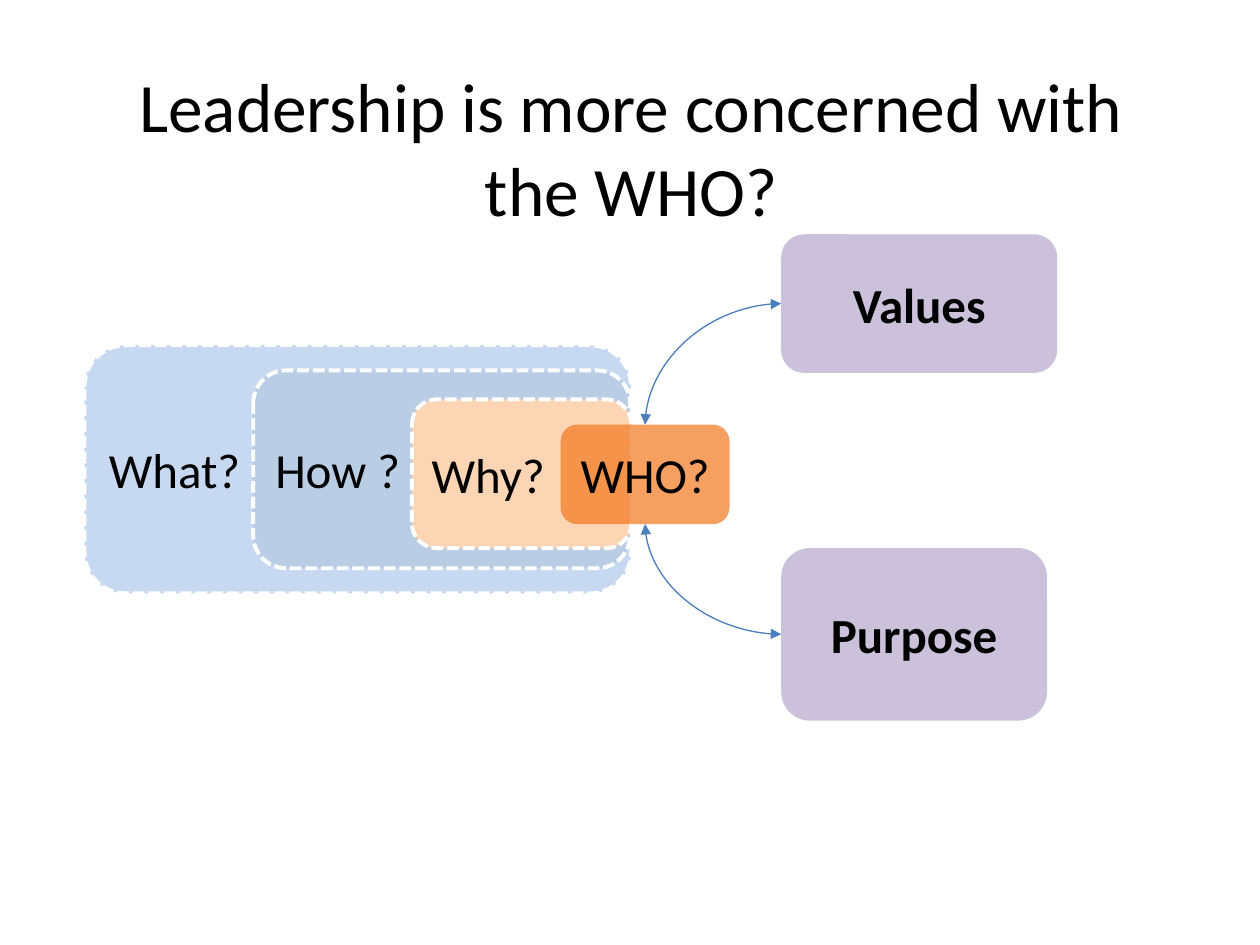
from lxml.etree import SubElement
from pptx import Presentation
from pptx.dml.color import RGBColor
from pptx.enum.dml import MSO_LINE
from pptx.enum.shapes import MSO_CONNECTOR, MSO_SHAPE
from pptx.enum.text import MSO_ANCHOR, MSO_AUTO_SIZE, PP_ALIGN
from pptx.oxml.ns import qn
from pptx.util import Inches, Pt

FONT = {"name": "Calibri", "size": Pt(28), "bold": False}
FRAME = {"word_wrap": True, "auto_size": MSO_AUTO_SIZE.NONE,
         "vertical_anchor": MSO_ANCHOR.MIDDLE}
NESTED = [
    ("What?", (0.67, 2.74, 4.34, 1.97), "C6D9F1"),
    ("How ?", (2.01, 2.94, 2.99, 1.57), "B9CDE5"),
    ("Why?", (3.27, 3.17, 1.74, 1.18), "FCD5B5"),
]
TOP, LEFT, BOTTOM = 0, 1, 2


def color(value):
    """Turn a hex string into a colour."""
    return RGBColor.from_string(value)


def assign(obj, values):
    """Set attributes from a dict."""
    for name, value in values.items():
        setattr(obj, name, value)


def write(sp, text, align, **font):
    """Put one formatted line of text in a shape."""
    tf = sp.text_frame
    assign(tf, FRAME)
    p = tf.paragraphs[0]
    p.alignment = align
    r = p.add_run()
    r.text = text
    assign(r.font, {**FONT, **font})
    r.font.color.rgb = color("000000")


def add_title(s, text, box):
    """Place and fill the title placeholder."""
    sp = s.shapes.title
    assign(sp, dict(zip(("left", "top", "width", "height"), map(Inches, box))))
    write(sp, text, PP_ALIGN.CENTER, size=Pt(39.6))


def add_box(s, text, box, fill, align=PP_ALIGN.CENTER, dashed=False, alpha=None, **font):
    """Add a rounded box with a label."""
    sp = s.shapes.add_shape(MSO_SHAPE.ROUNDED_RECTANGLE, *map(Inches, box))
    sp.shadow.inherit = False
    sp.fill.solid()
    sp.fill.fore_color.rgb = color(fill)
    if alpha:
        clr = sp.fill._xPr.find(f".//{qn('a:srgbClr')}")
        SubElement(clr, qn("a:alpha"), val=str(alpha * 1000))
    if dashed:
        sp.line.color.rgb = color("FFFFFF")
        assign(sp.line, {"width": Pt(2.25), "dash_style": MSO_LINE.SQUARE_DOT})
        sp.line._ln.find(qn("a:prstDash")).set("val", "sysDash")
    else:
        sp.line.fill.background()
    write(sp, text, align, **font)
    return sp


def add_curve(s, source, target, site):
    """Join a box's left side to the top or bottom of another box."""
    end_y = target.top if site == TOP else target.top + target.height
    c = s.shapes.add_connector(
        MSO_CONNECTOR.CURVE, source.left, source.top + source.height // 2,
        target.left + target.width // 2, end_y)
    c.begin_connect(source, LEFT)
    c.end_connect(target, site)
    c.line.color.rgb = color("4B7EBC")
    c.line.width = Pt(0.75)
    for tag in ("a:headEnd", "a:tailEnd"):
        SubElement(c.line._ln, qn(tag), type="triangle")
    sp_pr = c._element.spPr
    sp_pr.find(qn("a:prstGeom")).set("prst", "curvedConnector2")
    SubElement(sp_pr, qn("a:effectLst"))


def main():
    """Build the slide."""
    prs = Presentation()
    assign(prs, {"slide_width": Inches(10), "slide_height": Inches(7.5)})
    s = prs.slides.add_slide(prs.slide_layouts[5])
    purpose = add_box(s, "Purpose", (6.2, 4.35, 2.11, 1.37), "CCC1DA", bold=True)
    values = add_box(s, "Values", (6.2, 1.86, 2.19, 1.1), "CCC1DA", bold=True)
    add_title(s, "Leadership is more concerned with the WHO?", (0.7, 0.44, 8.62, 1.45))
    for text, box, fill in NESTED:
        add_box(s, text, box, fill, PP_ALIGN.LEFT, dashed=True)
    who = add_box(s, "WHO?", (4.45, 3.37, 1.34, 0.79), "F17417", alpha=68)
    add_curve(s, values, who, TOP)
    add_curve(s, purpose, who, BOTTOM)
    prs.save("out.pptx")


if __name__ == "__main__":
    main()
